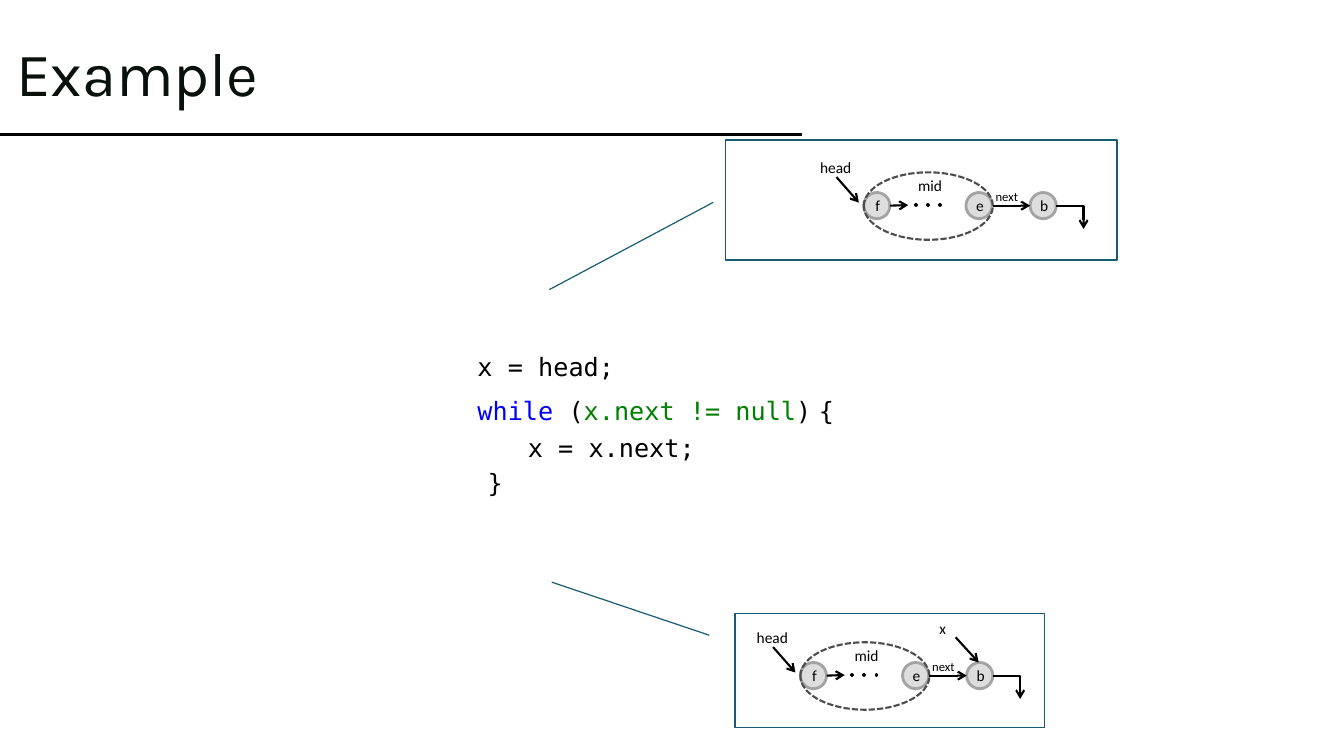
from pptx import Presentation
from pptx.dml.color import RGBColor
from pptx.enum.dml import MSO_LINE
from pptx.enum.shapes import MSO_CONNECTOR, MSO_SHAPE
from pptx.enum.text import MSO_ANCHOR, MSO_AUTO_SIZE, PP_ALIGN
from pptx.oxml.ns import qn
from pptx.util import Pt
from lxml import etree

STRAIGHT, ELBOW = MSO_CONNECTOR.STRAIGHT, MSO_CONNECTOR.ELBOW
OVAL, RECT, CALLOUT = MSO_SHAPE.OVAL, MSO_SHAPE.RECTANGLE, MSO_SHAPE.LINE_CALLOUT_1
DASH = MSO_LINE.SQUARE_DOT
MIDDLE, LEFT, CENTER = MSO_ANCHOR.MIDDLE, PP_ALIGN.LEFT, PP_ALIGN.CENTER
FIT = MSO_AUTO_SIZE.SHAPE_TO_FIT_TEXT

COLORS = {
    "black": "000000", "title": "08110B", "white": "FFFFFF",
    "keyword": "0000FF", "condition": "008000", "callout": "175B73",
    "node": "DDDDDD", "node_line": "A3A3A3", "dash": "4D4D4D",
}
MONO, SANS = "DejaVu Sans Mono", "Calibri"
NODE = 18.7


def rgb(name):
    return RGBColor.from_string(COLORS[name])


def add_run(p, text, size=11, font=SANS, color="black"):
    r = p.add_run()
    r.text = text
    r.font.size, r.font.name = Pt(size), font
    r.font.color.rgb = rgb(color)
    return r


def add_box(shapes, kind, x, y, w, h, fill=None, line="black", width=2.0):
    sp = shapes.add_shape(kind, Pt(x), Pt(y), Pt(w), Pt(h))
    sp.shadow.inherit = False
    if fill:
        sp.fill.solid()
        sp.fill.fore_color.rgb = rgb(fill)
    else:
        sp.fill.background()
    sp.line.color.rgb = rgb(line)
    sp.line.width = Pt(width)
    return sp


def add_line(s, x1, y1, x2, y2, width=1.5, arrow=True, kind=STRAIGHT):
    c = s.shapes.add_connector(kind, Pt(x1), Pt(y1), Pt(x2), Pt(y2))
    c.line.color.rgb = rgb("black")
    c.line.width = Pt(width)
    if arrow:
        etree.SubElement(c.line._get_or_add_ln(), qn("a:tailEnd"), type="arrow")
    spPr = c._element.spPr
    etree.SubElement(spPr, qn("a:effectLst"))
    if kind == ELBOW:
        spPr.find(qn("a:prstGeom")).set("prst", "bentConnector2")
    return c


def add_label(s, text, x, y, w, h=20.9, size=11):
    tf = s.shapes.add_textbox(Pt(x), Pt(y), Pt(w), Pt(h)).text_frame
    tf.word_wrap = False
    tf.auto_size = FIT
    add_run(tf.paragraphs[0], text, size=size)


def add_node(s, text, x, y):
    sp = add_box(s.shapes, OVAL, x, y, NODE, NODE, "node", "node_line")
    tf = sp.text_frame
    tf.margin_left, tf.margin_right = Pt(1.4), 0
    tf.vertical_anchor = MIDDLE
    p = tf.paragraphs[0]
    p.alignment = CENTER
    add_run(p, text)


def add_title(s, x, y, w, h):
    title = s.shapes.title
    title.left, title.top, title.width, title.height = Pt(x), Pt(y), Pt(w), Pt(h)
    tf = title.text_frame
    tf.vertical_anchor = MIDDLE
    p = tf.paragraphs[0]
    p.alignment, p.line_spacing = LEFT, 0.9
    add_run(p, "Example", size=44, font="Karla", color="title")


def add_code(s, x, y, w, h):
    """Each line of code is a first-line indent and its coloured runs."""
    lines = [
        (36, [("x = head;", {})]),
        (36, [("while", {"color": "keyword"}), (" (", {}),
              ("x.next != null", {"color": "condition"}), (")", {}),
              (" ", {"size": 24, "font": SANS}), ("{", {})]),
        (72, [("x = x.next;", {})]),
        (43.3, [("}", {})]),
    ]
    tf = s.shapes.add_textbox(Pt(x), Pt(y), Pt(w), Pt(h)).text_frame
    tf.word_wrap = True
    tf.auto_size = FIT
    for i, (indent, runs) in enumerate(lines):
        p = tf.add_paragraph() if i else tf.paragraphs[0]
        p.line_spacing = 1.15
        pPr = p._p.get_or_add_pPr()
        pPr.set("marL", "0")
        pPr.set("indent", str(int(Pt(indent))))
        for text, fmt in runs:
            add_run(p, text, **{"size": 18, "font": MONO, **fmt})


def add_callout(s, x, y, w, h, pointer):
    sp = add_box(s.shapes, CALLOUT, x, y, w, h, "white", "callout", 0.85)
    for i, value in enumerate(pointer):
        sp.adjustments[i] = value


def add_linked_list(s, x, y, with_x=False):
    """x, y is the top left of the dashed ellipse round the nodes f to e."""
    mid_y = y + 23.8
    for text, dx in (("f", 0), ("e", 73), ("b", 118.8)):
        add_node(s, text, x + dx, mid_y - NODE / 2)
    dots = s.shapes.add_group_shape()
    for i in range(3):
        add_box(dots.shapes, RECT, x + 36.7 + 8.64 * i, y + 23, 0.7, 0.7, "black")
    ellipse = add_box(s.shapes, OVAL, x, y, 92.2, 48.2, line="dash", width=1.5)
    ellipse.line.dash_style = DASH

    add_label(s, "mid", x + 31.7, y - 0.5, 31.7)
    add_label(s, "head", x - 38.3, y - 13.7, 36.7)
    add_label(s, "next", x + 87.1, y + 8.6, 31, 18, size=9)
    add_line(s, x - 19.5, y + 3.4, x - 3.5, y + 21.6)
    add_line(s, x + NODE, mid_y, x + 31.7, mid_y - 0.4)
    add_line(s, x + 92.2, mid_y, x + 118.8, mid_y)
    add_line(s, x + 137.5, mid_y, x + 157, mid_y + 16.7, kind=ELBOW)
    if with_x:
        add_label(s, "x", x + 92.2, y - 20.2, 19.4)
        add_line(s, x + 110.9, y - 3.6, x + 127.4, y + 14.4)


def example_slide(prs):
    s = prs.slides.add_slide(prs.slide_layouts[5])
    add_line(s, 0, 95.8, 573, 95.8, width=2.25, arrow=False)
    add_title(s, 4.3, 2.2, 540.7, 104.4)
    add_code(s, 298, 244, 360, 116)
    add_callout(s, 525, 438.5, 221, 81.4, (0.188, -0.083, -0.278, -0.592))
    add_callout(s, 518.4, 100, 279.4, 85.7, (0.52, -0.032, 1.247, -0.451))
    add_linked_list(s, 617, 123.1)
    add_linked_list(s, 571.7, 458.8, with_x=True)


def main():
    prs = Presentation()
    prs.slide_width, prs.slide_height = Pt(960), Pt(540)
    example_slide(prs)
    prs.save("out.pptx")


if __name__ == "__main__":
    main()
